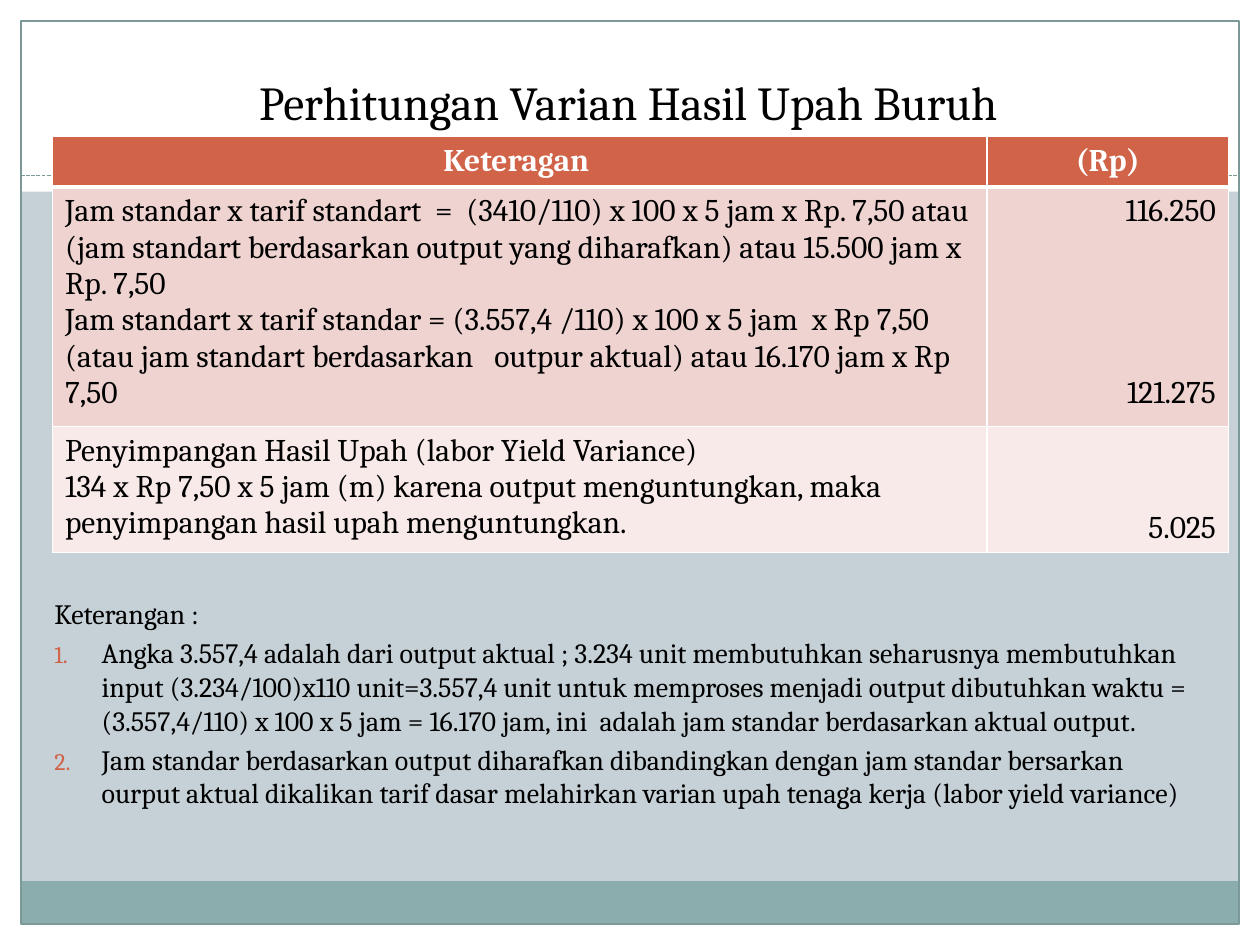
from dataclasses import dataclass

from lxml.etree import SubElement
from pptx import Presentation
from pptx.dml.color import RGBColor
from pptx.enum.dml import MSO_LINE_DASH_STYLE as Dash
from pptx.enum.shapes import MSO_CONNECTOR as Connector, MSO_SHAPE as Shape
from pptx.enum.text import MSO_ANCHOR as Anchor, PP_ALIGN as Align
from pptx.oxml.ns import qn
from pptx.util import Pt

FONT = "Cambria"
BLACK, WHITE = "000000", "FFFFFF"
ORANGE, PINK, PALE_PINK = "D16349", "EED3D0", "F7EAE9"
BACKGROUND, TEAL, FRAME = "C5D1D7", "8CADAE", "7C999A"
SLIDE_WIDTH, SLIDE_HEIGHT, MARGIN = 720, 540, 12
INNER_WIDTH = SLIDE_WIDTH - 2 * MARGIN


@dataclass
class Panel:
    left: float
    top: float
    width: float
    height: float
    fill: str | None = None
    line: str | None = None


@dataclass
class Cell:
    paragraphs: list[str]
    align: Align = Align.LEFT
    anchor: Anchor = Anchor.TOP
    gap: float = 0


@dataclass
class Row:
    height: float
    fill: str
    cells: list[Cell]
    color: str = BLACK
    bold: bool = False
    top_border: float = 1
    bottom_border: float = 1


PANELS = [
    Panel(0, 528, SLIDE_WIDTH, MARGIN, WHITE),
    Panel(0, 0, SLIDE_WIDTH, 109.5, WHITE),
    Panel(0, 0, MARGIN, SLIDE_HEIGHT, WHITE),
    Panel(SLIDE_WIDTH - MARGIN, 0, MARGIN, SLIDE_HEIGHT, WHITE),
    Panel(MARGIN, 503.5, INNER_WIDTH, 24.5, TEAL),
    Panel(MARGIN, MARGIN, INNER_WIDTH, SLIDE_HEIGHT - 2 * MARGIN, None, FRAME),
]

COLUMNS = [534, 138]
ROWS = [
    Row(28, ORANGE, [Cell(["Keteragan "], Align.CENTER), Cell(["(Rp)"], Align.CENTER)],
        WHITE, True, bottom_border=3),
    Row(132, PINK, [
        Cell(["Jam standar x tarif standart  =  (3410/110) x 100 x 5 jam x Rp. 7,50 atau "
              "(jam standart berdasarkan output yang diharafkan) atau 15.500 jam x Rp. 7,50",
              "Jam standart x tarif standar = (3.557,4 /110) x 100 x 5 jam  x Rp 7,50 "
              "(atau jam standart berdasarkan   outpur aktual) atau 16.170 jam x Rp 7,50"]),
        Cell(["116.250", "121.275"], Align.RIGHT, gap=83),
    ], top_border=3),
    Row(69.5, PALE_PINK, [
        Cell(["Penyimpangan Hasil Upah (labor Yield Variance)",
              "134 x Rp 7,50 x 5 jam (m) karena output menguntungkan, maka "
              "penyimpangan hasil upah menguntungkan."]),
        Cell(["5.025"], Align.RIGHT, Anchor.BOTTOM),
    ]),
]

NOTES = [
    "Keterangan :",
    "Angka 3.557,4 adalah dari output aktual ; 3.234 unit membutuhkan seharusnya "
    "membutuhkan input (3.234/100)x110 unit=3.557,4 unit untuk memproses menjadi output "
    "dibutuhkan waktu = (3.557,4/110) x 100 x 5 jam = 16.170 jam, ini  adalah jam standar "
    "berdasarkan aktual output.",
    "Jam standar berdasarkan output diharafkan dibandingkan dengan jam standar bersarkan "
    "ourput aktual dikalikan tarif dasar melahirkan varian upah tenaga kerja "
    "(labor yield variance)",
]


def paint(target, color: str) -> None:
    """Fill a fill format with one solid colour."""
    target.solid()
    target.fore_color.rgb = RGBColor.from_string(color)


def write(text_frame, paragraphs: list[str], size: float, color: str = BLACK,
          bold: bool = False, align: Align = Align.LEFT, gap: float = 0) -> None:
    text_frame.text = "\n".join(paragraphs)
    text_frame.word_wrap = True
    for index, paragraph in enumerate(text_frame.paragraphs):
        paragraph.alignment = align
        paragraph.space_before = Pt(gap if index else 0)
        for run in paragraph.runs:
            run.font.name, run.font.size, run.font.bold = FONT, Pt(size), bold
            paint(run.font.fill, color)


def add_panel(slide, panel: Panel) -> None:
    shape = slide.shapes.add_shape(Shape.RECTANGLE, Pt(panel.left), Pt(panel.top),
                                   Pt(panel.width), Pt(panel.height))
    shape.shadow.inherit = False
    if panel.fill:
        paint(shape.fill, panel.fill)
    else:
        shape.fill.background()
    if panel.line:
        paint(shape.line.fill, panel.line)
        shape.line.width = Pt(0.75)
    else:
        shape.line.fill.background()


def add_divider(slide, top: float) -> None:
    line = slide.shapes.add_connector(Connector.STRAIGHT, Pt(MARGIN), Pt(top),
                                      Pt(SLIDE_WIDTH - MARGIN), Pt(top))
    paint(line.line.fill, FRAME)
    line.line.width = Pt(0.75)
    line.line.dash_style = Dash.SQUARE_DOT
    SubElement(line.element.spPr, qn("a:effectLst"))


def add_text(slide, left: float, top: float, width: float, height: float):
    text_box = slide.shapes.add_textbox(Pt(left), Pt(top), Pt(width), Pt(height))
    return text_box.text_frame


def set_borders(cell, top: float, bottom: float) -> None:
    properties = cell._tc.get_or_add_tcPr()
    for side, width in (("L", 1), ("R", 1), ("T", top), ("B", bottom)):
        border = SubElement(properties, qn(f"a:ln{side}"), w=str(Pt(width)))
        fill = SubElement(border, qn("a:solidFill"))
        SubElement(fill, qn("a:srgbClr"), val=WHITE)


def add_cost_table(slide, left: float, top: float) -> None:
    frame = slide.shapes.add_table(len(ROWS), len(COLUMNS), Pt(left), Pt(top),
                                   Pt(sum(COLUMNS)), Pt(sum(row.height for row in ROWS)))
    table = frame.table
    for column, width in zip(table.columns, COLUMNS):
        column.width = Pt(width)
    for table_row, row in zip(table.rows, ROWS):
        table_row.height = Pt(row.height)
        for cell, content in zip(table_row.cells, row.cells):
            set_borders(cell, row.top_border, row.bottom_border)
            paint(cell.fill, row.fill)
            cell.vertical_anchor = content.anchor
            write(cell.text_frame, content.paragraphs, 18, row.color, row.bold,
                  content.align, content.gap)


def number(paragraph) -> None:
    properties = paragraph._p.get_or_add_pPr()
    properties.set("marL", str(Pt(27)))
    properties.set("indent", str(-Pt(27)))
    color = SubElement(properties, qn("a:buClr"))
    SubElement(color, qn("a:srgbClr"), val=ORANGE)
    SubElement(properties, qn("a:buSzPct"), val="85000")
    SubElement(properties, qn("a:buFont"), typeface=FONT)
    SubElement(properties, qn("a:buAutoNum"), type="arabicPeriod")


def main() -> None:
    presentation = Presentation()
    presentation.slide_width, presentation.slide_height = Pt(SLIDE_WIDTH), Pt(SLIDE_HEIGHT)
    slide = presentation.slides.add_slide(presentation.slide_layouts[6])

    # Background and frame
    paint(slide.background.fill, BACKGROUND)
    for panel in PANELS:
        add_panel(slide, panel)
    add_divider(slide, 100.5)

    # Title
    title = add_text(slide, 24, 38.5, 670, 39)
    write(title, ["Perhitungan Varian Hasil Upah Buruh"], 27, align=Align.CENTER)

    # Cost table
    add_cost_table(slide, 30, 78)

    # Numbered notes
    notes = add_text(slide, 24, 337.5, 670, 130)
    write(notes, NOTES, 16, gap=3.2)
    for paragraph in notes.paragraphs[1:]:
        number(paragraph)

    presentation.save("out.pptx")


if __name__ == "__main__":
    main()
